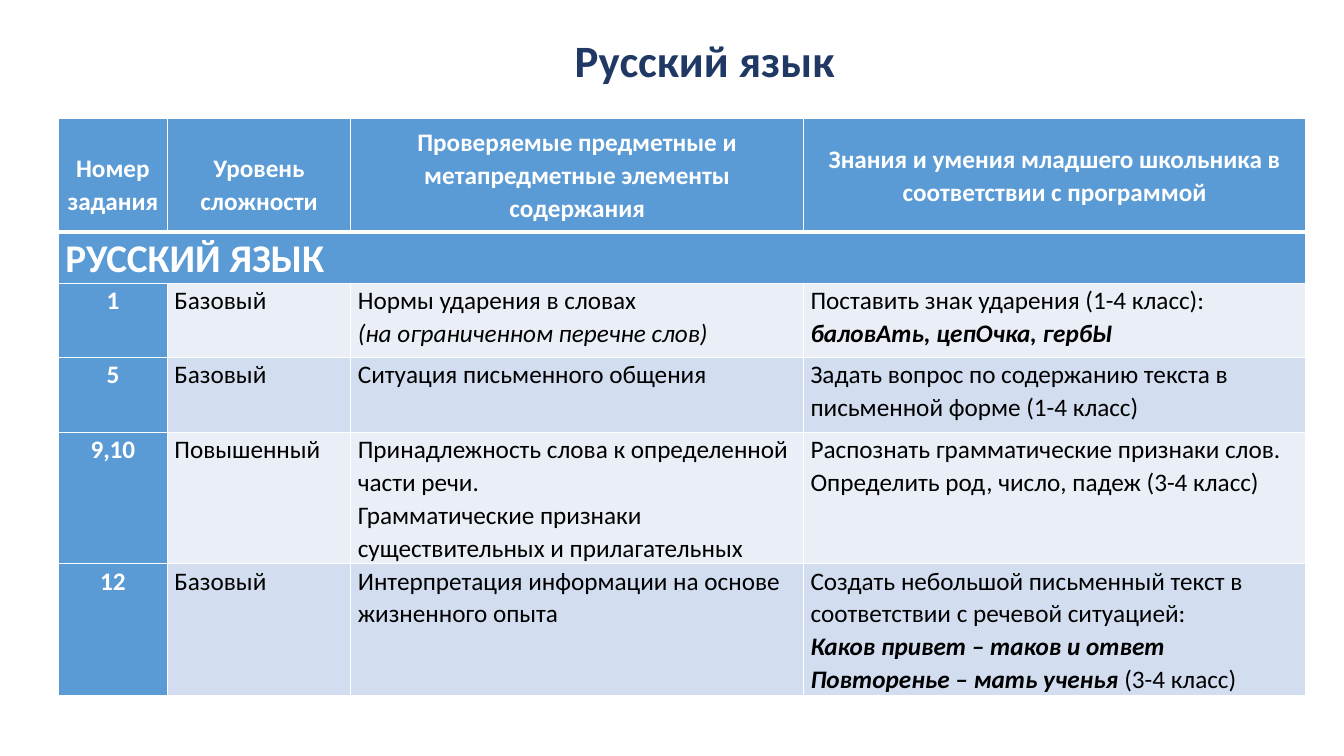
"""Build a slide with a table of Russian language tasks."""
import pptx
import pptx.dml.color
import pptx.enum.text
import pptx.oxml
import pptx.oxml.ns
import pptx.util
from pptx.util import Inches

COLORS = {"navy": "203864", "blue": "5B9BD5", "pale": "EAEFF7",
          "light": "D2DEEF", "white": "FFFFFF", "black": "000000"}
FONT = "Calibri"
ALIGN = pptx.enum.text.PP_ALIGN
ANCHOR = pptx.enum.text.MSO_ANCHOR
COLUMN_WIDTHS = [1.08, 1.82, 4.49, 4.98]
ROW_HEIGHTS = [1.13, 0.49, 0.74, 0.74, 1.29, 1.29]
HEADERS = [
    ["Номер задания"],
    ["Уровень", "сложности"],
    ["Проверяемые предметные и метапредметные элементы содержания"],
    ["Знания и умения младшего школьника в соответствии с программой"],
]
SECTION = "РУССКИЙ ЯЗЫК"
TASKS = [
    ("1", "Базовый",
     ["Нормы ударения в словах", [("(на ограниченном перечне слов)", "i")]],
     ["Поставить знак ударения (1-4 класс):",
      [("баловАть, цепОчка, гербЫ", "bi")]]),
    ("5", "Базовый",
     ["Ситуация письменного общения"],
     ["Задать вопрос по содержанию текста в письменной форме (1-4 класс)"]),
    ("9,10", "Повышенный",
     ["Принадлежность слова к определенной части речи.",
      "Грамматические признаки существительных и прилагательных"],
     ["Распознать грамматические признаки слов.",
      "Определить род, число, падеж (3-4 класс)"]),
    ("12", "Базовый",
     ["Интерпретация информации на основе жизненного опыта"],
     ["Создать небольшой письменный текст в соответствии с речевой ситуацией:",
      [("Каков привет – таков и ответ", "bi")],
      [("Повторенье – мать ученья ", "bi"), ("(3-4 класс)", "")]]),
]


def rgb(name):
    """Return the named colour."""
    return pptx.dml.color.RGBColor.from_string(COLORS[name])


def format_run(run, size, color, bold, italic=False):
    """Set the font of a run."""
    run.font.name = FONT
    run.font.size = pptx.util.Pt(size)
    run.font.color.rgb = rgb(color)
    run.font.bold = bold
    run.font.italic = italic


def set_borders(cell, top=1, bottom=1):
    """Give a cell white borders with widths in points."""
    properties = cell._tc.get_or_add_tcPr()
    for side, width in (("L", 1), ("R", 1), ("T", top), ("B", bottom)):
        properties.append(pptx.oxml.parse_xml(
            f'<a:ln{side} {pptx.oxml.ns.nsdecls("a")} w="{pptx.util.Pt(width)}">'
            f'<a:solidFill><a:srgbClr val="{COLORS["white"]}"/></a:solidFill>'
            f'</a:ln{side}>'))


def fill_cell(cell, paragraphs, fill, color="white", size=18, align=ALIGN.LEFT):
    """Write paragraphs, given as strings or styled pieces, into a cell."""
    cell.fill.solid()
    cell.fill.fore_color.rgb = rgb(fill)
    cell.margin_left = cell.margin_right = Inches(0.07)
    cell.margin_top = cell.margin_bottom = 0
    base_style = "b" if color == "white" else ""
    for index, content in enumerate(paragraphs):
        frame = cell.text_frame
        paragraph = frame.add_paragraph() if index else frame.paragraphs[0]
        paragraph.alignment = align
        paragraph.line_spacing = 1.07
        pieces = [(content, base_style)] if isinstance(content, str) else content
        for text, style in pieces:
            run = paragraph.add_run()
            run.text = text
            format_run(run, size, color, "b" in style, "i" in style)


def add_title(slide, text):
    """Add the slide title."""
    box = slide.shapes.add_textbox(Inches(3.36), Inches(0.28), Inches(7.26), Inches(0.64))
    box.text_frame.word_wrap = True
    paragraph = box.text_frame.paragraphs[0]
    paragraph.text = text
    paragraph.alignment = ALIGN.CENTER
    format_run(paragraph.runs[0], 32, "navy", True)


def add_task_table(slide):
    """Add the table with its header, section row and tasks."""
    table = slide.shapes.add_table(
        len(ROW_HEIGHTS), len(COLUMN_WIDTHS), Inches(0.58), Inches(1.17),
        Inches(sum(COLUMN_WIDTHS)), Inches(sum(ROW_HEIGHTS))).table
    for column, width in zip(table.columns, COLUMN_WIDTHS):
        column.width = Inches(width)
    for index, (row, height) in enumerate(zip(table.rows, ROW_HEIGHTS)):
        row.height = Inches(height)
        for cell in row.cells:
            set_borders(cell, 3 if index == 1 else 1, 3 if index == 0 else 1)

    for column, paragraphs in enumerate(HEADERS):
        cell = table.cell(0, column)
        fill_cell(cell, paragraphs, "blue", align=ALIGN.CENTER)
        if column < 2:
            cell.margin_top = Inches(0.33)
        else:
            cell.vertical_anchor = ANCHOR.MIDDLE

    section = table.cell(1, 0)
    section.merge(table.cell(1, len(COLUMN_WIDTHS) - 1))
    fill_cell(section, [SECTION], "blue", size=28)

    for index, (number, level, content, skills) in enumerate(TASKS):
        row = index + 2
        band = "light" if index % 2 else "pale"
        fill_cell(table.cell(row, 0), [number], "blue", align=ALIGN.CENTER)
        for column, paragraphs in enumerate(([level], content, skills), start=1):
            fill_cell(table.cell(row, column), paragraphs, band, "black")


def main():
    """Create and save the presentation."""
    presentation = pptx.Presentation()
    presentation.slide_width = Inches(13.33)
    presentation.slide_height = Inches(7.5)
    slide = presentation.slides.add_slide(presentation.slide_layouts[6])
    add_task_table(slide)
    add_title(slide, "Русский язык")
    presentation.save("out.pptx")


if __name__ == "__main__":
    main()
